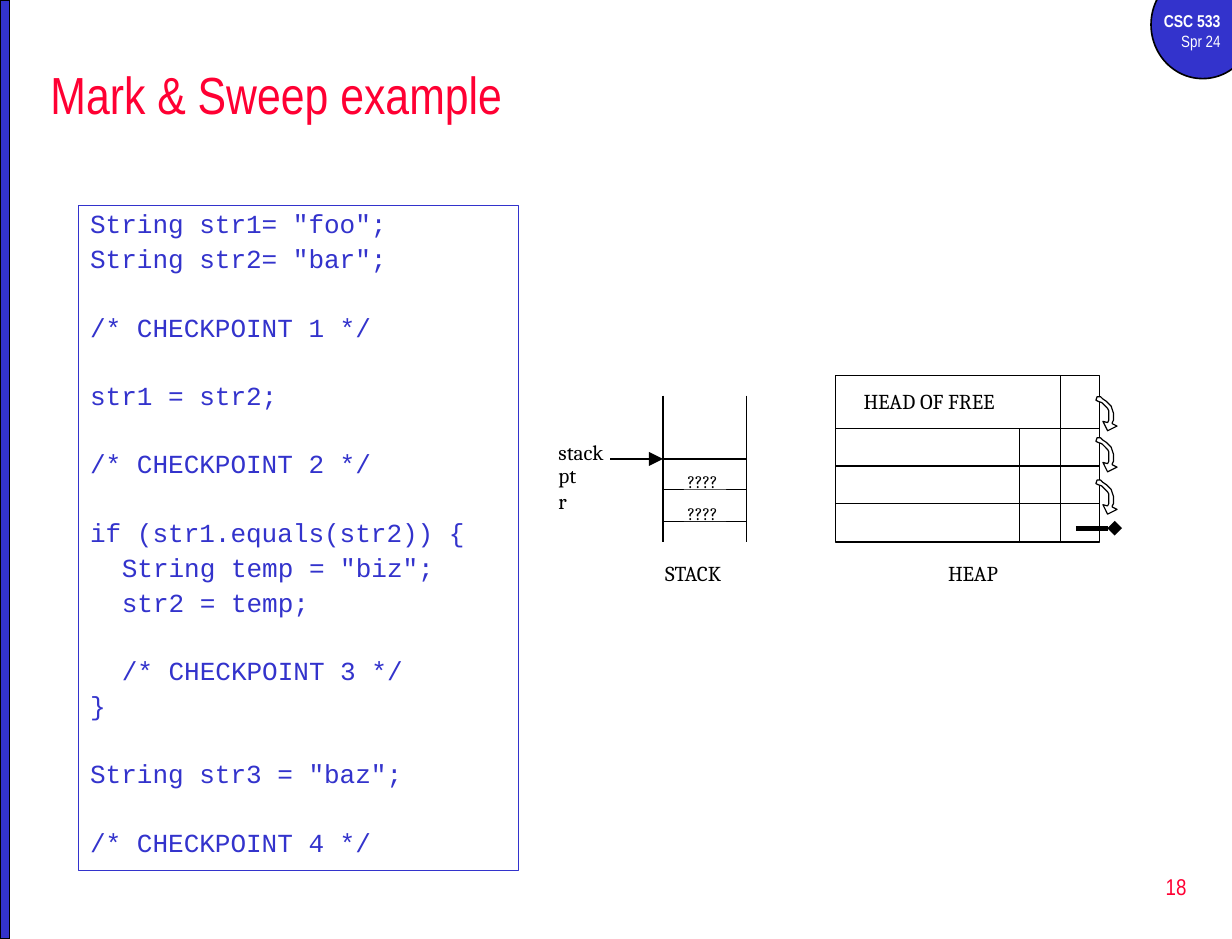
from lxml.etree import SubElement
from pptx import Presentation
from pptx.dml.color import RGBColor
from pptx.enum.shapes import MSO_CONNECTOR, MSO_SHAPE
from pptx.enum.text import MSO_ANCHOR, PP_ALIGN
from pptx.oxml.ns import qn
from pptx.util import Pt

PX = 9144
BLUE, RED, BLACK, WHITE = "3333CC", "FF0033", "000000", "FFFFFF"

TITLE = {"name": "Arial Narrow", "size": Pt(32)}
PAGE = {"name": "Arial Narrow", "size": Pt(14)}
COURSE = {"name": "Arial Narrow", "size": Pt(10.5), "bold": True}
TERM = {"name": "Arial Narrow", "size": Pt(10), "bold": False}
MONO = {"name": "Courier New", "size": Pt(16)}
LABEL = {"name": "Cambria", "size": Pt(13)}
CELL = {"name": "Cambria", "size": Pt(11)}

CODE = """String str1= "foo";
String str2= "bar";

/* CHECKPOINT 1 */

str1 = str2;

/* CHECKPOINT 2 */

if (str1.equals(str2)) {
  String temp = "biz";
  str2 = temp;

  /* CHECKPOINT 3 */
}

String str3 = "baz";

/* CHECKPOINT 4 */"""

HOOK = [(10, 22), (11, 20), (11, 17), (11, 14), (11, 12), (10, 10), (8, 8),
        (6, 6), (5, 5), (2, 4), (0, 3), (1, 0), (4, 0), (6, 2), (9, 4),
        (11, 6), (13, 8), (14, 11), (15, 14), (15, 17), (15, 20), (14, 22),
        (14, 23), (18, 25), (10, 29), (6, 21)]
HEAD = [(0, 12), (12, 6), (0, 0)]


def emu(*sizes):
    """Turn px lengths into EMU."""
    return [size * PX for size in sizes]


def tint(hue):
    """Turn a hex string into a colour."""
    return RGBColor.from_string(hue)


def style(item, form):
    """Set each format value on an item."""
    for key, value in form.items():
        setattr(item, key, value)


def paint(shape, fill=None, line=None, width=1):
    """Set the fill and line of a shape and drop its shadow."""
    shape.shadow.inherit = False
    if fill:
        shape.fill.solid()
        shape.fill.fore_color.rgb = tint(fill)
    else:
        shape.fill.background()
    if line:
        shape.line.color.rgb = tint(line)
        shape.line.width = Pt(width)
    else:
        shape.line.fill.background()
    return shape


def block(slide, kind, box, **look):
    """Add a painted preset shape."""
    return paint(slide.shapes.add_shape(kind, *emu(*box)), **look)


def outline(slide, x, y, dots, **look):
    """Add a closed outline with its corner at x, y."""
    pen = slide.shapes.build_freeform(*dots[0], scale=PX)
    pen.add_line_segments(dots[1:], close=True)
    return paint(pen.convert_to_shape(*emu(x, y)), **look)


def rule(slide, start, end, width=1):
    """Add a straight black line."""
    line = slide.shapes.add_connector(
        MSO_CONNECTOR.STRAIGHT, *emu(*start, *end))
    line.line.color.rgb = tint(BLACK)
    line.line.width = Pt(width)
    SubElement(line._element.spPr, qn("a:effectLst"))
    return line


def write(para, text, form, hue):
    """Fill a paragraph with one formatted run."""
    run = para.add_run()
    run.text = text
    style(run.font, form)
    run.font.color.rgb = tint(hue)


def label(slide, box, text, form=LABEL, inset=(0, 0), fill=None):
    """Add a left-aligned label, inset from the corner of its box."""
    note = slide.shapes.add_textbox(*emu(*box))
    if fill:
        paint(note, fill)
    left, top = emu(*inset)
    style(note.text_frame, {"word_wrap": True, "margin_left": left,
                            "margin_top": top, "margin_right": 0,
                            "margin_bottom": 0})
    write(note.text_frame.paragraphs[0], text, form, BLACK)


def frame(slide):
    """Draw the side bar, course badge and page number."""
    block(slide, MSO_SHAPE.OVAL, (981, -25, 88, 92), fill=BLUE, line=BLACK)
    block(slide, MSO_SHAPE.RECTANGLE, (0, 0, 8, 800), fill=BLUE, line=BLACK)
    badge = slide.shapes.add_textbox(*emu(967, 4, 83, 46)).text_frame
    page = slide.shapes.add_textbox(*emu(802, 729, 219, 53)).text_frame
    badge.word_wrap = page.word_wrap = True
    page.vertical_anchor = MSO_ANCHOR.MIDDLE
    rows = [(badge.paragraphs[0], "CSC 533", COURSE, WHITE),
            (badge.add_paragraph(), "Spr 24", TERM, WHITE),
            (page.paragraphs[0], "18", PAGE, RED)]
    for para, text, form, hue in rows:
        para.alignment = PP_ALIGN.RIGHT
        write(para, text, form, hue)


def title(slide, box, text):
    """Place and fill the title."""
    head = slide.shapes.title
    style(head, dict(zip(("left", "top", "width", "height"), emu(*box))))
    head.text_frame.vertical_anchor = MSO_ANCHOR.MIDDLE
    para = head.text_frame.paragraphs[0]
    para.alignment = PP_ALIGN.LEFT
    write(para, text, TITLE, RED)


def listing(slide, box, code):
    """Draw the code panel, with a gap for each empty line."""
    panel = block(slide, MSO_SHAPE.RECTANGLE, box, line=BLUE, width=0.75)
    body = panel.text_frame
    style(body, {"word_wrap": True, "vertical_anchor": MSO_ANCHOR.TOP})
    para, gap = body.paragraphs[0], 4.2
    for text in code.split("\n"):
        if not text:
            gap += 20.5
            continue
        if para.runs:
            para = body.add_paragraph()
        style(para, {"alignment": PP_ALIGN.LEFT, "line_spacing": 0.9,
                     "space_before": Pt(gap)})
        if text.startswith(" "):
            para._p.get_or_add_pPr().set("marL", str(27 * PX))
        write(para, text.strip(), MONO, BLUE)
        gap = 4.2


def heap(slide, x, y, wide, high):
    """Draw the heap grid with its free-list links."""
    block(slide, MSO_SHAPE.RECTANGLE, (x, y, wide, high),
          fill=WHITE, line=BLACK)
    for row in range(3):
        level = y + 45 + 32 * row
        rule(slide, (x, level), (x + wide, level))
    for side, top in ((192, 0), (157, 45)):
        rule(slide, (x + side, y + top), (x + side, y + high))
    label(slide, (x + 23, y + 8, 152, 27), "HEAD OF FREE",
          inset=(1, 3), fill=WHITE)
    label(slide, (x + 85, y + 150, 71, 35), "HEAP",
          inset=(11, 7), fill=WHITE)
    for row in range(3):
        outline(slide, x + 222, y + 18 + 71 * row // 2, HOOK,
                fill=WHITE, line=BLACK, width=0.75)
    stop = rule(slide, (x + 205, y + 130), (x + 238, y + 130), 3)
    SubElement(stop.line._get_or_add_ln(), qn("a:tailEnd"), type="diamond")


def stack(slide, x, y, wide, high):
    """Draw the stack with its pointer and two cells."""
    for side in (x, x + wide):
        rule(slide, (side, y), (side, y + high), 0.75)
    for row in range(3):
        level = y + 54 + 53 * row // 2
        rule(slide, (x, level), (x + wide, level), 0.75)
    for row in range(2):
        label(slide, (x + 18, y + 62 + 27 * row, 36, 18), "????", CELL,
              inset=(3, 2), fill=WHITE)
    rule(slide, (x - 45, y + 54), (x - 12, y + 54), 0.75)
    outline(slide, x - 12, y + 48, HEAD, fill=BLACK)
    label(slide, (x - 89, y + 37, 42, 22), "stack")
    label(slide, (x - 89, y + 57, 21, 22), "ptr")
    label(slide, (x - 9, y + 133, 89, 35), "STACK",
          inset=(11, 7), fill=WHITE)


def main():
    """Build and save the slide."""
    deck = Presentation()
    deck.slide_width, deck.slide_height = emu(1050, 800)
    slide = deck.slides.add_slide(deck.slide_layouts[5])
    frame(slide)
    title(slide, (33, 42, 992, 75), "Mark & Sweep example")
    listing(slide, (67, 175, 375, 567), CODE)
    heap(slide, 712, 320, 225, 142)
    stack(slide, 565, 337, 71, 125)
    deck.save("out.pptx")


if __name__ == "__main__":
    main()
